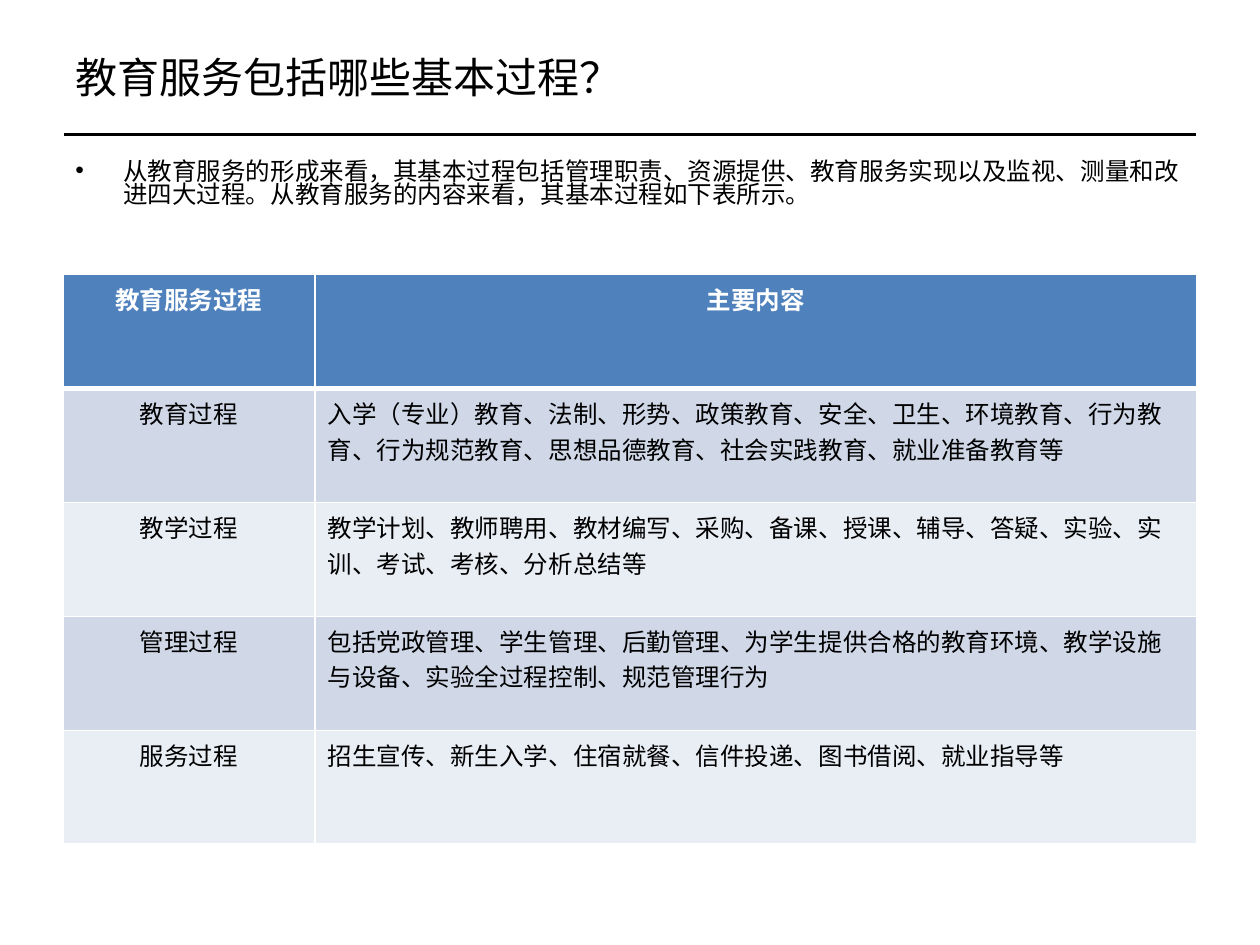
import pptx
import pptx.dml.color
import pptx.enum.shapes
import pptx.enum.text
import pptx.oxml.ns
import pptx.util
from lxml import etree

Inches = pptx.util.Inches
Pt = pptx.util.Pt
PP_ALIGN = pptx.enum.text.PP_ALIGN
ANCHOR = pptx.enum.text.MSO_ANCHOR
qn = pptx.oxml.ns.qn

TITLE = "教育服务包括哪些基本过程？"
INTRO = "从教育服务的形成来看，其基本过程包括管理职责、资源提供、教育服务实现以及监视、测量和改进四大过程。从教育服务的内容来看，其基本过程如下表所示。"
ROWS = [
    ("教育服务过程", "主要内容"),
    ("教育过程", "入学（专业）教育、法制、形势、政策教育、安全、卫生、环境教育、行为教育、行为规范教育、思想品德教育、社会实践教育、就业准备教育等"),
    ("教学过程", "教学计划、教师聘用、教材编写、采购、备课、授课、辅导、答疑、实验、实训、考试、考核、分析总结等"),
    ("管理过程", "包括党政管理、学生管理、后勤管理、为学生提供合格的教育环境、教学设施与设备、实验全过程控制、规范管理行为"),
    ("服务过程", "招生宣传、新生入学、住宿就餐、信件投递、图书借阅、就业指导等"),
]
COLUMN_WIDTHS = (2, 7)
LEFT, WIDTH = 0.5, 9
TABLE_TOP, TABLE_HEIGHT = 2.18, 4.52
HEADER_FILL = "4F81BD"
BAND_FILLS = ("E9EDF4", "D0D8E8")


def color(value):
    return pptx.dml.color.RGBColor.from_string(value)


def write(frame, text, size=14, font="Arial", ink="000000", bold=False,
          align=PP_ALIGN.LEFT, spacing=None, bullet=None, indent=0.38):
    frame.word_wrap = True
    para = frame.paragraphs[0]
    para.alignment = align
    if spacing:
        para.line_spacing = spacing
    if bullet:
        properties = para._p.get_or_add_pPr()
        properties.set("marL", str(Inches(indent)))
        properties.set("indent", str(-Inches(indent)))
        etree.SubElement(properties, qn("a:buFont")).set("typeface", "Arial")
        etree.SubElement(properties, qn("a:buChar")).set("char", bullet)
    span = para.add_run()
    span.text = text
    span.font.size = Pt(size)
    span.font.name = font
    span.font.bold = bold
    span.font.color.rgb = color(ink)


def add_text(page, top, height, text, anchor=ANCHOR.TOP, **style):
    box = page.shapes.add_textbox(Inches(LEFT), Inches(top), Inches(WIDTH), Inches(height))
    box.text_frame.vertical_anchor = anchor
    write(box.text_frame, text, **style)


def add_rule(page, left, right, top):
    rule = page.shapes.add_connector(
        pptx.enum.shapes.MSO_CONNECTOR.STRAIGHT,
        Inches(left), Inches(top), Inches(right), Inches(top))
    rule.line.color.rgb = color("000000")
    rule.line.width = Pt(1.5)
    etree.SubElement(rule._element.spPr, qn("a:effectLst"))


def set_cell(cell, fill, widths):
    properties = cell._tc.get_or_add_tcPr()
    for side, width in widths.items():
        border = etree.SubElement(properties, qn("a:ln" + side), w=str(Pt(width)))
        solid = etree.SubElement(border, qn("a:solidFill"))
        etree.SubElement(solid, qn("a:srgbClr"), val="FFFFFF")
    cell.fill.solid()
    cell.fill.fore_color.rgb = color(fill)


def add_process_table(page):
    table = page.shapes.add_table(
        len(ROWS), len(COLUMN_WIDTHS), Inches(LEFT), Inches(TABLE_TOP),
        Inches(WIDTH), Inches(TABLE_HEIGHT)).table
    for column, width in zip(table.columns, COLUMN_WIDTHS):
        column.width = Inches(width)
    for row, texts in enumerate(ROWS):
        header = row == 0
        fill = HEADER_FILL if header else BAND_FILLS[row % 2]
        widths = {"L": 1, "R": 1, "T": 3 if row == 1 else 1, "B": 3 if header else 1}
        for column, text in enumerate(texts):
            cell = table.cell(row, column)
            set_cell(cell, fill, widths)
            centered = header or column == 0
            write(cell.text_frame, text, font="Calibri", bold=header,
                  ink="FFFFFF" if header else "000000",
                  align=PP_ALIGN.CENTER if centered else PP_ALIGN.LEFT)


def main():
    deck = pptx.Presentation()
    deck.slide_width, deck.slide_height = Inches(10), Inches(7.5)
    page = deck.slides.add_slide(deck.slide_layouts[6])
    add_rule(page, 0.51, 9.49, 1.07)
    add_text(page, 0.3, 0.61, TITLE, anchor=ANCHOR.MIDDLE, size=24)
    add_text(page, 1.23, 0.71, INTRO, spacing=0.8, bullet="•")
    add_process_table(page)
    deck.save("out.pptx")


if __name__ == "__main__":
    main()
